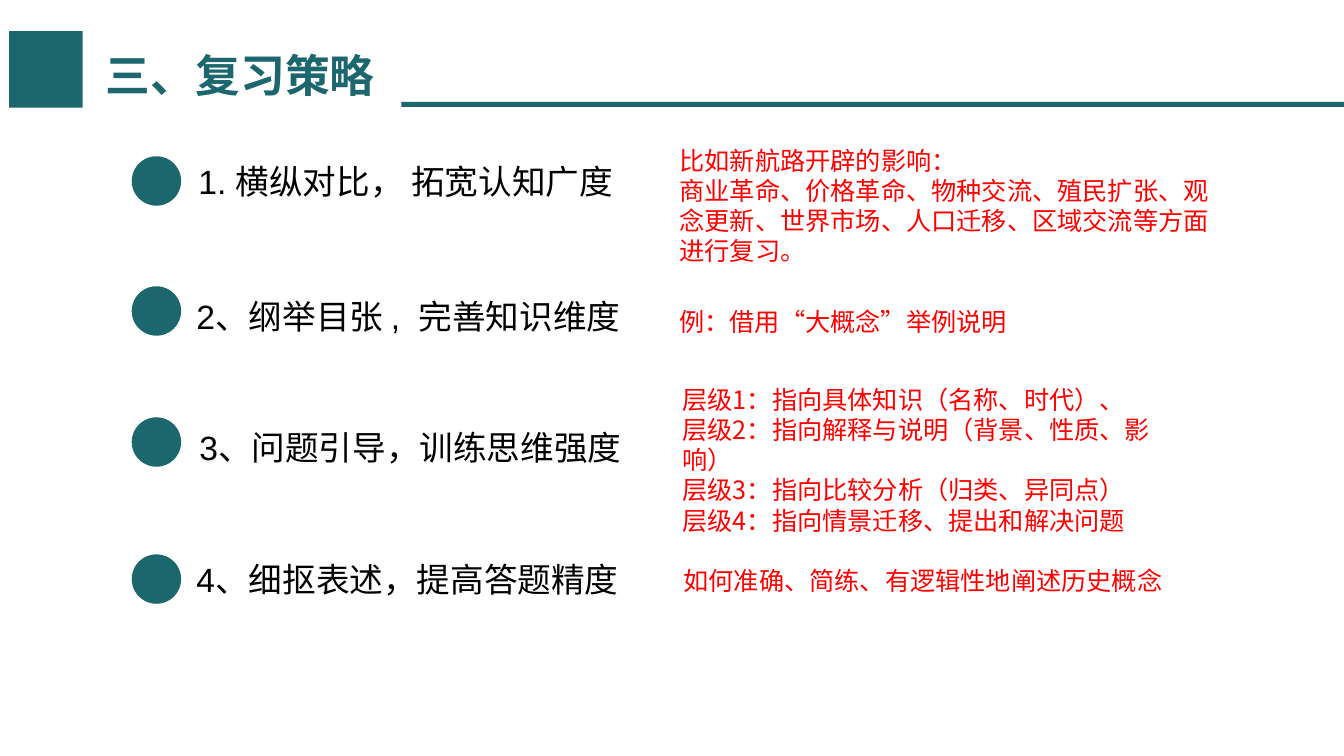
from dataclasses import dataclass

from lxml.etree import SubElement
from pptx import Presentation
from pptx.dml.color import RGBColor
from pptx.enum.shapes import MSO_SHAPE
from pptx.enum.text import MSO_AUTO_SIZE
from pptx.oxml.ns import qn
from pptx.util import Inches, Pt

WIDTH, HEIGHT = Inches(13.33), Inches(7.5)


@dataclass(frozen=True)
class TextStyle:
    size: int
    color: RGBColor
    latin: str
    bold: bool = False
    line_spacing: float = 1.0


@dataclass(frozen=True)
class Theme:
    cjk: str = "Noto Sans CJK SC"
    accent: RGBColor = RGBColor(0x1C, 0x66, 0x6E)
    title: TextStyle = TextStyle(32, accent, cjk, True, 1.2)
    strategy: TextStyle = TextStyle(24, RGBColor(0, 0, 0), "Arial")
    detail: TextStyle = TextStyle(18, RGBColor(255, 0, 0), cjk)


THEME = Theme()

BULLET_LEFT, BULLET_SIZE = 9.8, Inches(0.49)
STRATEGY_HEIGHT = 6.67

STRATEGIES = [
    (20.67, (14.03, 20.67, 35.56), "1. 横纵对比， 拓宽认知广度"),
    (37.87, (13.88, 38.53, 33.76), "2、纲举目张 ,  完善知识维度"),
    (55.2, (14.1, 55.87, 33.16), "3、问题引导，训练思维强度"),
    (73.33, (13.88, 73.33, 34.73), "4、细抠表述，提高答题精度"),
]

DETAILS = [
    ((49.81, 18.53, 42.31, 17.47), [
        "比如新航路开辟的影响：",
        "商业革命、价格革命、物种交流、殖民扩张、观念更新、世界市场、人口迁移、区域交流等方面进行复习。",
    ]),
    ((49.81, 39.87, 29.86, 5.33), ["例：借用“大概念”举例说明"]),
    ((50.04, 50.13, 39.68, 17.47), [
        "层级1：指向具体知识（名称、时代）、",
        "层级2：指向解释与说明（背景、性质、影响）",
        "层级3：指向比较分析（归类、异同点）",
        "层级4：指向情景迁移、提出和解决问题",
    ]),
    ((50.11, 74.13, 40.66, 5.33), ["如何准确、简练、有逻辑性地阐述历史概念"]),
]


def across(percent):
    return round(WIDTH * percent / 100)


def down(percent):
    return round(HEIGHT * percent / 100)


def add_accent(slide, kind, left, top, width, height):
    accent = slide.shapes.add_shape(kind, left, top, width, height)
    accent.shadow.inherit = False
    accent.fill.solid()
    accent.fill.fore_color.rgb = THEME.accent
    accent.line.fill.background()


def style_paragraph(paragraph, style):
    paragraph.line_spacing = style.line_spacing
    paragraph.font.size = Pt(style.size)
    paragraph.font.bold = style.bold
    paragraph.font.color.rgb = style.color
    paragraph.font.name = style.latin
    defaults = paragraph._p.pPr.find(qn("a:defRPr"))
    SubElement(defaults, qn("a:ea")).set("typeface", THEME.cjk)


def add_text(slide, area, lines, style):
    left, top, width, height = area
    box = slide.shapes.add_textbox(
        across(left), down(top), across(width), down(height))
    frame = box.text_frame
    frame.word_wrap = True
    frame.auto_size = MSO_AUTO_SIZE.SHAPE_TO_FIT_TEXT
    frame.text = "\n".join(lines)
    for paragraph in frame.paragraphs:
        style_paragraph(paragraph, style)


def add_header(slide):
    add_accent(slide, MSO_SHAPE.RECTANGLE,
               across(29.86), down(13.47), across(70.14), down(0.67))
    add_accent(slide, MSO_SHAPE.RECTANGLE,
               across(0.68), down(4.13), across(5.48), down(10.13))
    add_text(slide, (7.13, 4.27, 23.11, 10), ["三、复习策略"], THEME.title)


def add_strategy(slide, bullet_top, area, wording):
    add_accent(slide, MSO_SHAPE.OVAL, across(BULLET_LEFT), down(bullet_top),
               BULLET_SIZE, BULLET_SIZE)
    add_text(slide, (*area, STRATEGY_HEIGHT), [wording], THEME.strategy)


def main():
    deck = Presentation()
    deck.slide_width, deck.slide_height = WIDTH, HEIGHT
    slide = deck.slides.add_slide(deck.slide_layouts[6])
    add_header(slide)
    for bullet_top, area, wording in STRATEGIES:
        add_strategy(slide, bullet_top, area, wording)
    for area, lines in DETAILS:
        add_text(slide, area, lines, THEME.detail)
    deck.save("out.pptx")


if __name__ == "__main__":
    main()
